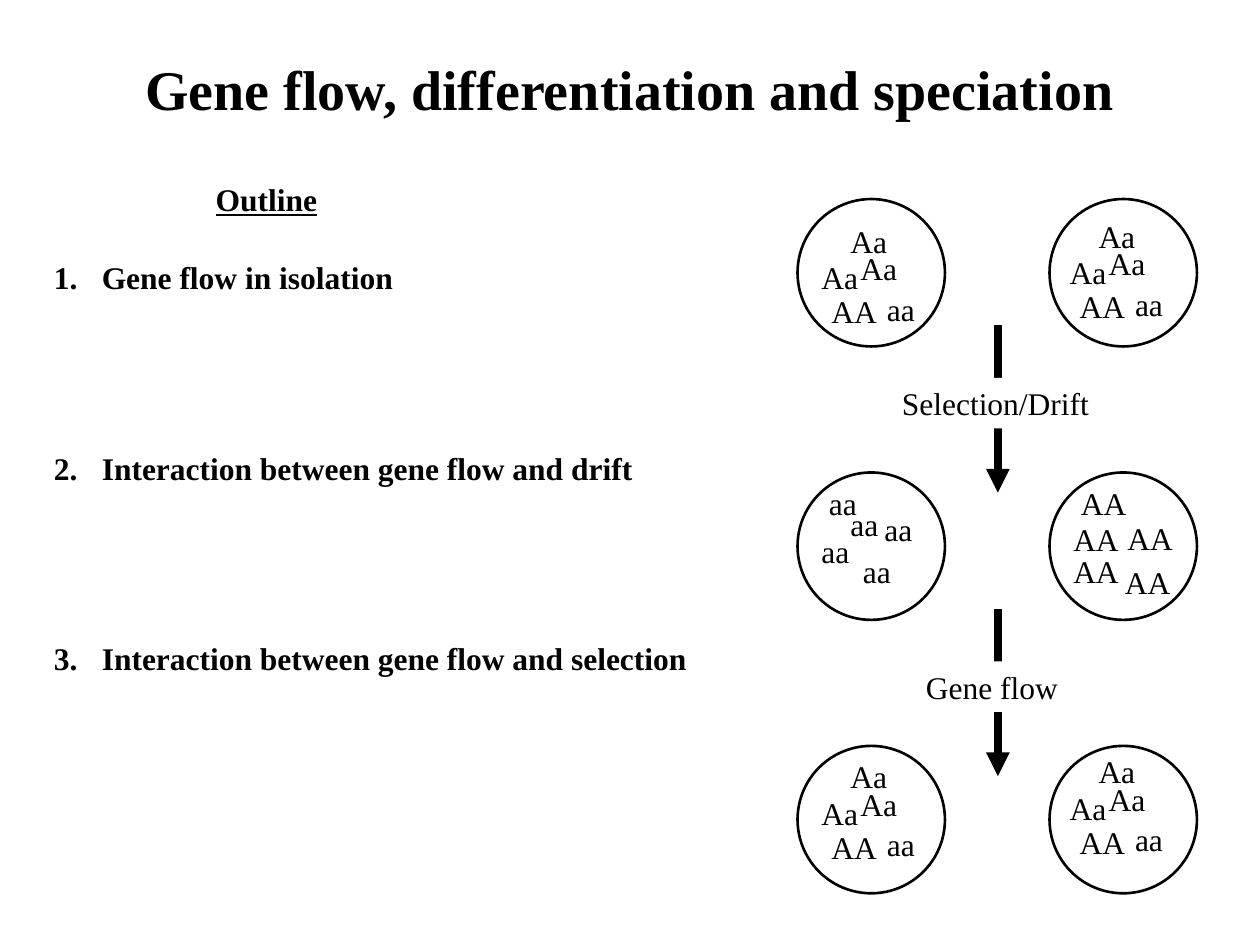
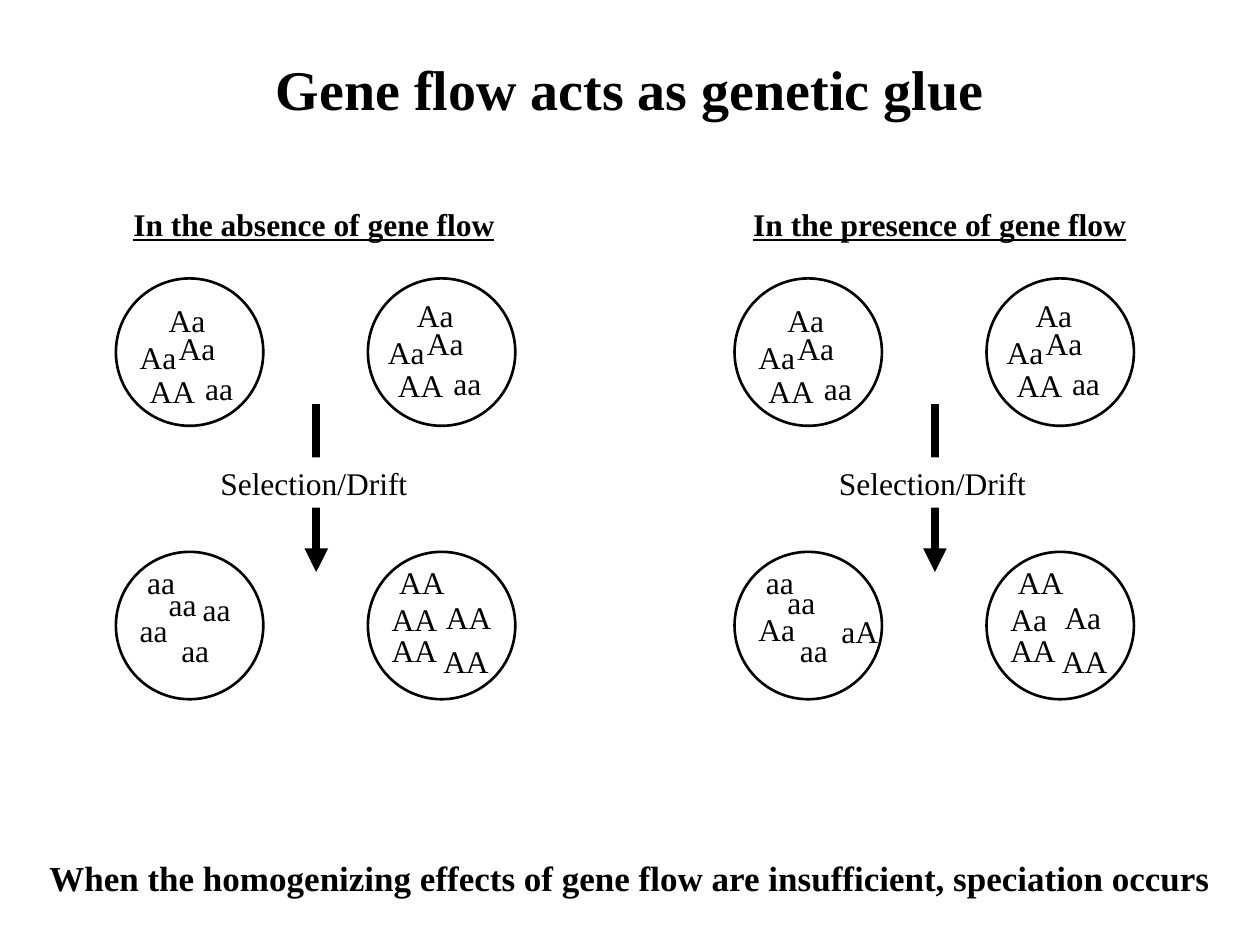
from lxml.etree import SubElement
from pptx import Presentation
from pptx.dml.color import RGBColor
from pptx.enum.shapes import MSO_CONNECTOR, MSO_SHAPE
from pptx.enum.text import MSO_AUTO_SIZE, PP_ALIGN
from pptx.oxml.ns import qn
from pptx.util import Emu, Pt

# Shared style: 100 px to the inch
SCALE = 9144
FONT = "Times New Roman"
COLORS = {"ink": "000000", "paper": "FFFFFF"}

# Layout rules
CIRCLE = 117
COLUMN_STEP = 200
ROW_STEP = 217
ARROW_LENGTH = 133
GENE_WIDTHS = {"Aa": 49, "aA": 49, "AA": 56, "aa": 42}

# Genotypes with offsets from the top left of their circle
MIXED = [("Aa", 32, 13), ("Aa", 40, 35), ("AA", 17, 69),
         ("Aa", 9, 42), ("aa", 61, 67)]
ALL_SMALL = [("aa", 15, 4), ("aa", 32, 21), ("aa", 42, 58),
             ("aa", 59, 25), ("aa", 9, 42)]
ALL_LARGE = [("AA", 15, 4), ("AA", 52, 32), ("AA", 50, 67),
             ("AA", 9, 58), ("AA", 9, 33)]
MOSTLY_SMALL = [("aa", 15, 4), ("aa", 32, 20), ("aa", 42, 58),
                ("aA", 75, 43), ("Aa", 9, 41)]
MOSTLY_LARGE = [("AA", 15, 4), ("Aa", 52, 32), ("AA", 50, 67),
                ("AA", 9, 58), ("Aa", 9, 33)]


def px(length):
    return Emu(length * SCALE)


def color(name):
    return RGBColor.from_string(COLORS[name])


def shifted(genes, dx, dy):
    return [(gene, x + dx, y + dy) for gene, x, y in genes]


def write(para, text, size=18, bold=False, underline=False, align=PP_ALIGN.LEFT):
    para.alignment = align
    span = para.add_run()
    span.text = text
    span.font.name = FONT
    span.font.size = Pt(size)
    span.font.bold = bold
    span.font.underline = underline
    span.font.color.rgb = color("ink")


class Deck:
    def __init__(self):
        self.file = Presentation()
        self.file.slide_width, self.file.slide_height = px(1000), px(750)
        self.page = None

    def add_page(self, title):
        self.page = self.file.slides.add_slide(self.file.slide_layouts[6])
        self.page.background.fill.solid()
        self.page.background.fill.fore_color.rgb = color("paper")
        self.banner(title, 0, 38, 1000, 63, size=32)

    def frame(self, x, y, width, height, wrap=False):
        box = self.page.shapes.add_textbox(px(x), px(y), px(width), px(height))
        box.text_frame.word_wrap = wrap
        return box

    def text(self, text, x, y, width, height=40, wrap=False, fill=None, **style):
        box = self.frame(x, y, width, height, wrap)
        box.text_frame.auto_size = MSO_AUTO_SIZE.SHAPE_TO_FIT_TEXT
        if fill:
            box.fill.solid()
            box.fill.fore_color.rgb = color(fill)
        write(box.text_frame.paragraphs[0], text, **style)

    def banner(self, text, x, y, width, height=40, **style):
        self.text(text, x, y, width, height, wrap=True, bold=True,
                  align=PP_ALIGN.CENTER, **style)

    def numbered_list(self, items, x, y, width, height, gap):
        frame = self.frame(x, y, width, height).text_frame
        for index, item in enumerate(items):
            para = frame.add_paragraph() if index else frame.paragraphs[0]
            para.space_before = Pt(gap if index else 0)
            write(para, item, bold=True)
            properties = para._p.get_or_add_pPr()
            properties.set("marL", str(px(38)))
            properties.set("indent", str(px(-38)))
            SubElement(properties, qn("a:buAutoNum"), type="arabicPeriod")

    def population(self, x, y, genes):
        circle = self.page.shapes.add_shape(
            MSO_SHAPE.OVAL, px(x), px(y), px(CIRCLE), px(CIRCLE))
        circle.shadow.inherit = False
        circle.fill.background()
        circle.line.color.rgb = color("ink")
        circle.line.width = Pt(1.5)
        for gene, dx, dy in genes:
            self.text(gene, x + dx, y + dy, GENE_WIDTHS[gene])

    def populations(self, x, y, rows):
        for row, pair in enumerate(rows):
            for column, genes in enumerate(pair):
                self.population(x + column * COLUMN_STEP, y + row * ROW_STEP, genes)

    def force(self, label, x, y, label_x, label_width):
        arrow = self.page.shapes.add_connector(
            MSO_CONNECTOR.STRAIGHT, px(x), px(y), px(x), px(y + ARROW_LENGTH))
        arrow.line.color.rgb = color("ink")
        arrow.line.width = Pt(4.5)
        SubElement(arrow.line._get_or_add_ln(), qn("a:tailEnd"), type="triangle")
        SubElement(arrow._element.spPr, qn("a:effectLst"))
        self.text(label, label_x, y + 42, label_width, fill="paper")

    def selection(self, x, y):
        self.force("Selection/Drift", x + 159, y + 100, x + 73, 169)


def main():
    deck = Deck()
    start = (MIXED, shifted(MIXED, -3, -4))
    apart = (ALL_SMALL, ALL_LARGE)
    rejoined = [shifted(genes, 0, -9) for genes in start]

    # Outline page
    deck.add_page("Gene flow, differentiation and speciation")
    deck.banner("Outline", 65, 138, 293, underline=True)
    deck.numbered_list(
        ["Gene flow in isolation",
         "Interaction between gene flow and drift",
         "Interaction between gene flow and selection"],
        33, 200, 527, 434, gap=87.3)
    deck.populations(633, 158, [start, apart, rejoined])
    deck.selection(633, 158)
    deck.force("Gene flow", 792, 483, 725, 125)

    # Comparison page
    deck.add_page("Gene flow acts as genetic glue")
    scenarios = [
        ("In the absence of gene flow", 92, 96, 307, apart),
        ("In the presence of gene flow", 583, 588, 317, (MOSTLY_SMALL, MOSTLY_LARGE)),
    ]
    for heading, x, heading_x, heading_width, outcome in scenarios:
        deck.populations(x, 221, [start, outcome])
        deck.selection(x, 221)
        deck.text(heading, heading_x, 158, heading_width, bold=True, underline=True)
    deck.banner("When the homogenizing effects of gene flow are insufficient, "
                "speciation occurs", 0, 675, 1000, 43, size=20)

    deck.file.save("out.pptx")


if __name__ == "__main__":
    main()
